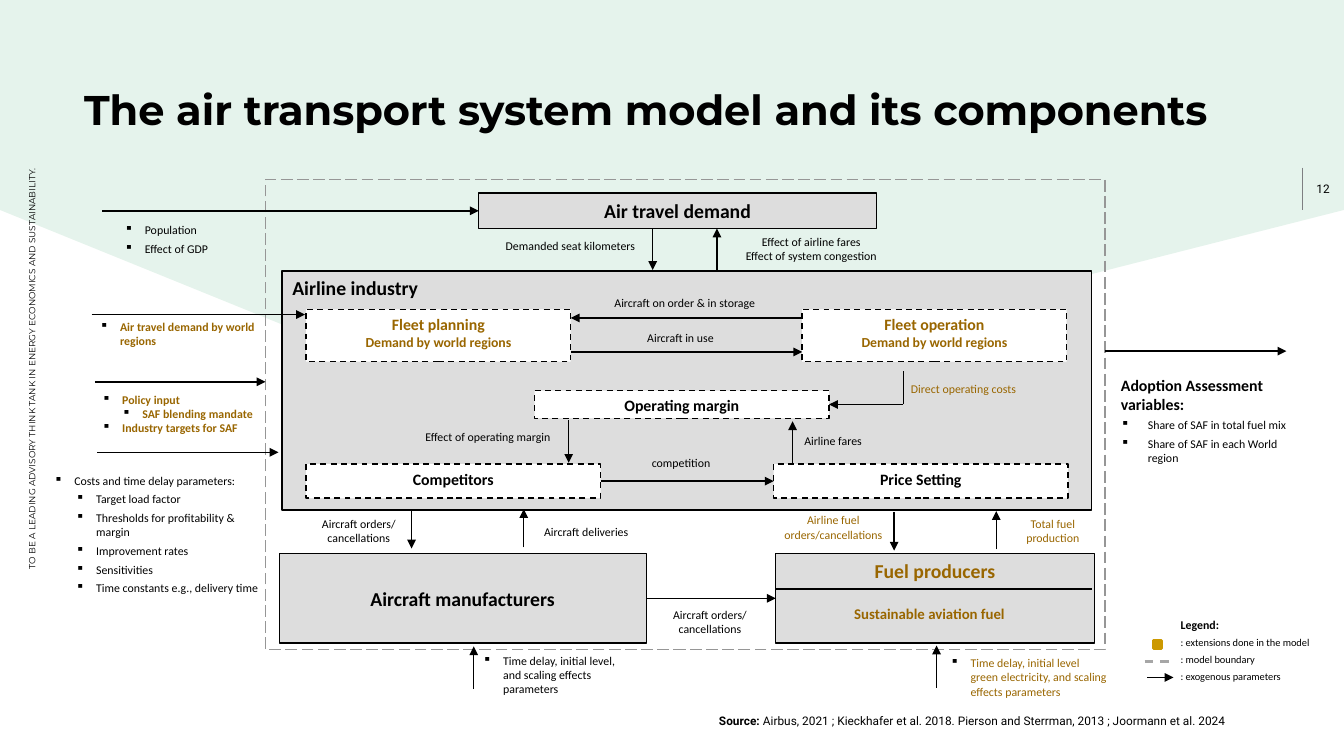
from copy import deepcopy
from lxml.etree import SubElement
from pptx import Presentation
from pptx.dml.color import RGBColor
from pptx.enum.dml import MSO_LINE_DASH_STYLE as DASH
from pptx.enum.shapes import MSO_CONNECTOR, MSO_SHAPE
from pptx.enum.text import MSO_ANCHOR as ANCHOR, PP_ALIGN as ALIGN
from pptx.oxml.ns import qn
from pptx.util import Cm, Pt

COLORS = {"black": "000000", "brown": "996600", "gold": "CC9900", "box": "DDDDDD",
          "white": "FFFFFF", "boundary": "969696", "key": "A6A6A6", "rule": "7E7F82",
          "green": "019247"}
TITLE = "The air transport system model and its components"
BACKDROP = [(0, 0), (32, 0), (32, 5), (12.32, 10), (0, 5)]

BIG = {"size": 13.3, "bold": True, "align": ALIGN.CENTER}
MID = {"size": 10.7, "bold": True, "align": ALIGN.CENTER}
BROWN = {"color": "brown"}
CENTER = {"align": ALIGN.CENTER}
BULLET = {"marker": 0.48, "before": 3}
SUB = {"marker": 1.0}
REGIONS = ("Demand by world regions", {"size": 9.3})
SOLID = {"fill": "box"}
DASHED = {"fill": "white", "dash": DASH.DASH}

BOXES = {
    "boundary": ((6.32, 4.27, 19.99, 11.2), [], {"line": "boundary", "dash": DASH.LONG_DASH}, {}),
    "demand": ((11.4, 4.6, 9.47, 0.84), ["Air travel demand"], SOLID, BIG),
    "industry": ((6.71, 6.45, 19.28, 5.69), ["Airline industry"], SOLID, {**BIG, "align": ALIGN.LEFT}),
    "planning": ((7.29, 7.37, 6.3, 1.24), ["Fleet planning", REGIONS], DASHED, {**MID, **BROWN}),
    "operation": ((19.1, 7.37, 6.3, 1.24), ["Fleet operation", REGIONS], DASHED, {**MID, **BROWN}),
    "margin": ((12.73, 9.3, 7.01, 0.66), ["Operating margin"], DASHED, MID),
    "competitors": ((7.29, 11.05, 7.01, 0.81), ["Competitors"], DASHED, MID),
    "prices": ((18.42, 11.05, 7.01, 0.81), ["Price Setting"], DASHED, MID),
    "makers": ((6.65, 13.18, 8.74, 2.13), ["Aircraft manufacturers"], SOLID,
               {**BIG, "anchor": ANCHOR.MIDDLE}),
    "fuel": ((18.47, 13.18, 7.59, 2.13), ["Fuel producers"], SOLID, {**BIG, **BROWN}),
    "extension key": ((27.46, 15.24, 0.2, 0.2), [], {"fill": "gold", "line": "gold", "width": 2}, {}),
}

LABELS = [
    ((31.01, 3.99, 0.99, 0.99), ["12"],
     {**CENTER, "font": "Roboto", "inset": 0, "anchor": ANCHOR.MIDDLE}),
    ((-5.74, 10.26, 13, 0.51),
     ["TO BE A LEADING ADVISORY THINK TANK IN ENERGY ECONOMICS AND SUSTAINABILITY."],
     {"align": ALIGN.RIGHT, "font": "Montserrat", "size": 6, "inset": 0,
      "anchor": ANCHOR.MIDDLE, "rotation": 270}),
    ((2.72, 5.18, 3.2, 1.04), ["Population", "Effect of GDP"], BULLET),
    ((11.3, 5.56, 4.57, 0.61), ["Demanded seat kilometers"], CENTER),
    ((17.35, 5.46, 3.94, 0.94), ["Effect of airline fares", "Effect of system congestion"], CENTER),
    ((15.27, 10.72, 1.93, 0.61), ["competition"], {"wrap": False}),
    ((15.16, 7.75, 2.34, 0.61), ["Aircraft in use"], {}),
    ((14.38, 6.91, 4.57, 0.61), ["Aircraft on order & in storage"], {}),
    ((18.9, 10.19, 1.9, 0.61), ["Airline fares"], {"wrap": False}),
    ((9.88, 10.11, 3.84, 0.61), ["Effect of operating margin"], {}),
    ((21.44, 8.97, 3.25, 0.61), ["Direct operating costs"], BROWN),
    ((1.04, 11.15, 5.56, 3.18),
     ["Costs and time delay parameters:", ("Target load factor", SUB),
      ("Thresholds for profitability & margin", SUB), ("Improvement rates", SUB),
      ("Sensitivities", SUB), ("Time constants e.g., delivery time", SUB)], BULLET),
    ((27.86, 14.58, 3.63, 1.83),
     [("Legend:", {"size": 8, "bold": True}), ": extensions done in the model",
      ": model boundary", ": exogenous parameters"], {"size": 7, "before": 3}),
    ((7.39, 12.17, 2.31, 0.94), ["Aircraft orders/", "cancellations"], {**CENTER, "wrap": False}),
    ((15.75, 14.35, 2.31, 0.94), ["Aircraft orders/", "cancellations"], {**CENTER, "wrap": False}),
    ((12.55, 12.37, 2.82, 0.61), ["Aircraft deliveries"], CENTER),
    ((11.25, 15.44, 3.89, 1.27),
     ["Time delay, initial level,\vand scaling effects parameters"], BULLET),
    ((22.38, 15.49, 4.8, 1.27),
     ["Time delay, initial level\vgreen electricity, and scaling effects parameters"],
     {**BULLET, **BROWN}),
    ((20.09, 14.27, 4.39, 0.69), ["Sustainable aviation fuel"], {**BROWN, "size": 10, "bold": True}),
    ((18.31, 12.09, 3.07, 0.94), ["Airline fuel orders/cancellations"], {**CENTER, **BROWN}),
    ((24.08, 12.17, 1.98, 0.94), ["Total fuel production"], {**CENTER, **BROWN}),
    ((26.44, 8.81, 4.8, 2.41),
     [("Adoption Assessment variables:", {"size": 10.7, "bold": True, "marker": 0}),
      "Share of SAF in total fuel mix", "Share of SAF in each World region"],
     {"marker": 0.64, "hang": 0.64, "before": 3}),
    ((2.18, 9.22, 4.57, 1.27),
     ["Policy input", ("SAF blending mandate", {"marker": 0.96}), "Industry targets for SAF"],
     {**BROWN, "bold": True, "marker": 0.48}),
    ((2.13, 7.49, 4.57, 0.94), ["Air travel demand by world regions"],
     {**BROWN, "bold": True, "marker": 0.48}),
    ((16.87, 16.87, 13.16, 0.61),
     [" Airbus, 2021 ; Kieckhafer et al. 2018. Pierson and Sterrman, 2013 ; Joormann et al. 2024"],
     {"font": "Roboto", "lead": "Source:"}),
]

PLAIN = {"head": False}
LINES = [
    ((15.54, 5.44), (15.54, 6.43), {}),
    ((17.07, 6.43), (17.07, 5.44), {}),
    ((13.59, 8.38), (19.1, 8.38), {}),
    ((19.1, 7.57), (13.59, 7.57), {}),
    ((18.87, 11.05), (18.87, 10.03), {}),
    ((13.54, 10.01), (13.54, 11.02), {}),
    ((21.51, 8.84), (21.51, 9.63), PLAIN),
    ((21.51, 9.63), ("margin", 3), {}),
    (("competitors", 3), ("prices", 1), {}),
    (("makers", 3), ("fuel", 1), {}),
    ((2.44, 5.02), ("demand", 1), {}),
    ((2.18, 7.49), (7.26, 7.49), {}),
    ((2.26, 9.09), (6.32, 9.09), {}),
    ((2.31, 10.77), (6.63, 10.77), {}),
    ((9.8, 12.14), (9.8, 13.06), {}),
    ((12.47, 13.03), (12.47, 12.12), {}),
    ((21.29, 12.19), (21.29, 13.11), {}),
    ((23.72, 13.08), (23.72, 12.17), {}),
    ((11.28, 16.41), (11.28, 15.39), {}),
    ((22.3, 16.38), (22.3, 15.37), {}),
    ((26.31, 8.36), (30.63, 8.36), {}),
    ((18.47, 14.02), (26.01, 14.02), PLAIN),
    ((31.01, 3.99), (31.01, 5), {**PLAIN, "color": "rule"}),
    ((27.25, 15.75), (27.97, 15.75), {**PLAIN, "color": "key", "width": 1.5, "dash": DASH.DASH}),
    ((27.31, 16.13), (27.94, 16.13), {}),
]


def rgb(name):
    return RGBColor.from_string(COLORS[name])


def write(tf, paras, anchor=ANCHOR.TOP, inset=None, wrap=True, **base):
    tf.word_wrap, tf.vertical_anchor = wrap, anchor
    if inset is not None:
        tf.margin_left = tf.margin_right = tf.margin_top = tf.margin_bottom = Cm(inset)
    for i, para in enumerate(paras):
        text, own = (para, {}) if isinstance(para, str) else para
        f = {**base, **own}
        p = tf.paragraphs[0] if i == 0 else tf.add_paragraph()
        p.text = text
        if f.get("marker"):
            pPr = p._p.get_or_add_pPr()
            pPr.set("marL", str(Cm(f["marker"])))
            pPr.set("indent", str(-Cm(f.get("hang", 0.48))))
            SubElement(SubElement(pPr, qn("a:buClr")), qn("a:srgbClr"), val=COLORS["black"])
            SubElement(pPr, qn("a:buChar"), char="▪")
        p.alignment = f.get("align", ALIGN.LEFT)
        if i and "before" in f:
            p.space_before = Pt(f["before"])
        if "lead" in f:
            lead = p.add_run()
            lead.text = f["lead"]
            p.runs[0]._r.addprevious(lead._r)
        for r in p.runs:
            r.font.name, r.font.size = f.get("font", "Calibri"), Pt(f.get("size", 8))
            r.font.bold = f.get("bold", False) or r.text == f.get("lead")
            r.font.color.rgb = rgb(f.get("color", "black"))
        for br in p._p.findall(qn("a:br")):
            br.append(deepcopy(p.runs[0]._r.rPr))


def stroke(line, color="black", width=1, dash=None):
    line.color.rgb, line.width = rgb(color), Pt(width)
    if dash:
        line.dash_style = dash


def add_box(shapes, at, paras, look, fmt):
    sp = shapes.add_shape(MSO_SHAPE.RECTANGLE, *map(Cm, at))
    sp.shadow.inherit = False
    if "fill" in look:
        sp.fill.solid()
        sp.fill.fore_color.rgb = rgb(look["fill"])
    else:
        sp.fill.background()
    stroke(sp.line, look.get("line", "black"), look.get("width", 1), look.get("dash"))
    write(sp.text_frame, paras, **fmt)
    return sp


def add_line(shapes, boxes, start, end, head=True, **look):
    ends = [(0, 0) if isinstance(e[0], str) else e for e in (start, end)]
    c = shapes.add_connector(MSO_CONNECTOR.STRAIGHT, *map(Cm, ends[0] + ends[1]))
    for e, join in ((start, c.begin_connect), (end, c.end_connect)):
        if isinstance(e[0], str):
            join(boxes[e[0]], e[1])
    stroke(c.line, **look)
    if head:
        SubElement(c.line._get_or_add_ln(), qn("a:tailEnd"), type="triangle")
    SubElement(c._element.spPr, qn("a:effectLst"))


def main():
    prs = Presentation()
    prs.slide_width, prs.slide_height = Cm(32), Cm(18)
    s = prs.slides.add_slide(prs.slide_layouts[5])
    shapes = s.shapes

    fb = shapes.build_freeform(0, 0)
    fb.add_line_segments([(Cm(x), Cm(y)) for x, y in BACKDROP[1:]], close=True)
    sp = fb.convert_to_shape()
    sp.shadow.inherit = False
    sp.fill.solid()
    sp.fill.fore_color.rgb = rgb("green")
    SubElement(sp._element.spPr.find(".//" + qn("a:srgbClr")), qn("a:alpha"), val="10000")
    sp.line.fill.background()
    shapes.title._element.addprevious(sp._element)

    title = shapes.title
    title.left, title.top, title.width, title.height = map(Cm, (2, 2, 28, 2))
    write(title.text_frame, [TITLE], inset=0, font="Montserrat", size=28, bold=True)

    boxes = {name: add_box(shapes, *box) for name, box in BOXES.items()}
    for at, paras, fmt in LABELS:
        fmt = dict(fmt)
        sp = shapes.add_textbox(*map(Cm, at))
        sp.rotation = fmt.pop("rotation", 0)
        write(sp.text_frame, paras, **fmt)
    for start, end, look in LINES:
        add_line(shapes, boxes, start, end, **look)
    prs.save("out.pptx")


if __name__ == "__main__":
    main()
